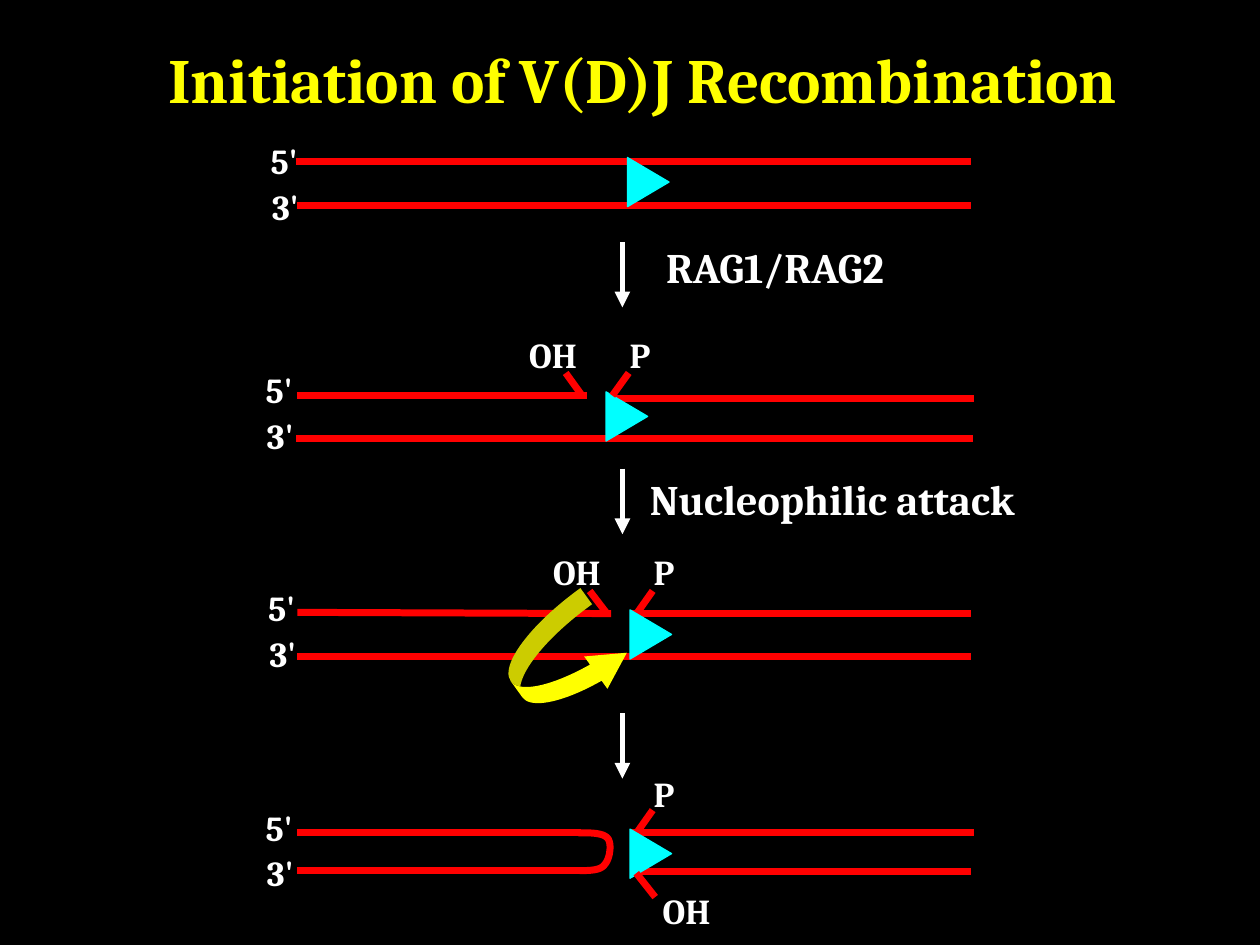
from lxml.etree import SubElement
from pptx import Presentation
from pptx.dml.color import RGBColor
from pptx.enum.shapes import MSO_CONNECTOR, MSO_SHAPE
from pptx.enum.text import MSO_ANCHOR, PP_ALIGN
from pptx.oxml.ns import qn
from pptx.util import Inches, Pt

BLACK, WHITE, RED = "000000", "FFFFFF", "FF0000"
YELLOW, CYAN = "FFFF00", "00FFFF"


def color(hex_value):
    return RGBColor.from_string(hex_value)


def bezier(p0, p1, p2, p3, steps=12):
    """Return points along a cubic curve, without its start point."""
    points = []
    for step in range(1, steps + 1):
        t = step / steps
        weights = ((1 - t) ** 3, 3 * t * (1 - t) ** 2, 3 * t * t * (1 - t), t ** 3)
        points.append(tuple(sum(w * p[axis] for w, p in zip(weights, (p0, p1, p2, p3)))
                            for axis in (0, 1)))
    return points


class Diagram:
    """Holds the slide and the style shared by its elements."""

    font_format = {"name": "Cambria", "bold": True}
    strand_width = 4
    arrow_width = 3

    def __init__(self, slide):
        self.slide = slide
        self.shapes = slide.shapes

    def text(self, words, left, top, width, height=0.53, size=20, fill=WHITE):
        box = self.shapes.add_textbox(Inches(left), Inches(top), Inches(width), Inches(height))
        frame = box.text_frame
        for name, value in {"word_wrap": True, "vertical_anchor": MSO_ANCHOR.MIDDLE}.items():
            setattr(frame, name, value)
        paragraph = frame.paragraphs[0]
        paragraph.alignment = PP_ALIGN.CENTER
        run = paragraph.add_run()
        run.text = words
        for name, value in {**self.font_format, "size": Pt(size)}.items():
            setattr(run.font, name, value)
        run.font.color.rgb = color(fill)

    def shape(self, kind, left, top, width, height, fill, rotation=0, outline=None):
        shape = self.shapes.add_shape(kind, Inches(left), Inches(top),
                                      Inches(width), Inches(height))
        shape.shadow.inherit = False
        shape.rotation = rotation
        shape.fill.solid()
        shape.fill.fore_color.rgb = color(fill)
        if outline:
            shape.line.color.rgb = color(outline)
            shape.line.width = Pt(0.75)
        else:
            shape.line.fill.background()
        return shape

    def line(self, start, end, stroke=RED, width=strand_width):
        ends = [Inches(value) for value in (*start, *end)]
        line = self.shapes.add_connector(MSO_CONNECTOR.STRAIGHT, *ends)
        line.line.color.rgb = color(stroke)
        line.line.width = Pt(width)
        SubElement(line._element.spPr, qn("a:effectLst"))
        return line

    def step_arrow(self, top, x=4.94, length=0.52):
        arrow = self.line((x, top), (x, top + length), WHITE, self.arrow_width)
        SubElement(arrow.line._get_or_add_ln(), qn("a:tailEnd"), type="triangle")

    def curve(self, start, *segments):
        points = [start]
        for segment in segments:
            points += bezier(points[-1], *segment)
        builder = self.shapes.build_freeform(*(Inches(v) for v in start), scale=1.0)
        builder.add_line_segments([(Inches(x), Inches(y)) for x, y in points[1:]], close=False)
        curve = builder.convert_to_shape()
        curve.shadow.inherit = False
        curve.fill.background()
        curve.line.color.rgb = color(RED)
        curve.line.width = Pt(self.strand_width)

    def stage(self, label_left, label_top, strands, signal_left, signal_top, stubs, groups):
        """Draw one DNA state: strands, signal triangle, end labels and chemical groups."""
        for start, end in strands:
            self.line(start, end)
        self.shape(MSO_SHAPE.ISOSCELES_TRIANGLE, signal_left, signal_top, 0.39, 0.33,
                   CYAN, rotation=90, outline=CYAN)
        for row, end_name in enumerate(("5'", "3'")):
            self.text(end_name, label_left + 0.01 * row, label_top + 0.36 * row, 0.53)
        for start, end in stubs:
            self.line(start, end)
        for name, left, top in groups:
            self.text(name, left, top, 0.66)


STAGES = [
    dict(label_left=1.99, label_top=1.01, signal_left=4.95, signal_top=1.28,
         strands=[((2.35, 1.28), (7.71, 1.28)), ((2.36, 1.63), (7.71, 1.63))],
         stubs=[], groups=[]),
    dict(label_left=1.95, label_top=2.83, signal_left=4.78, signal_top=3.14,
         strands=[((2.36, 3.14), (4.66, 3.14)), ((2.35, 3.48), (7.72, 3.48)),
                  ((4.81, 3.16), (7.73, 3.16))],
         stubs=[((4.49, 2.96), (4.62, 3.14)), ((4.99, 2.96), (4.86, 3.14))],
         groups=[("OH", 4.06, 2.55), ("P", 4.75, 2.55)]),
    dict(label_left=1.97, label_top=4.56, signal_left=4.97, signal_top=4.87,
         strands=[((2.36, 4.86), (4.85, 4.87)), ((2.36, 5.21), (7.71, 5.21)),
                  ((5.02, 4.87), (7.71, 4.87))],
         stubs=[((4.68, 4.69), (4.81, 4.86)), ((5.18, 4.69), (5.06, 4.86))],
         groups=[("OH", 4.25, 4.27), ("P", 4.94, 4.27)]),
    dict(label_left=1.95, label_top=6.3, signal_left=4.97, signal_top=6.61,
         strands=[((2.36, 6.61), (4.61, 6.61)), ((2.36, 6.91), (4.61, 6.91)),
                  ((5.02, 6.61), (7.73, 6.61)), ((5, 6.92), (7.71, 6.92))],
         stubs=[((5.18, 6.43), (5.06, 6.6)), ((5.2, 7.12), (5.05, 6.93))],
         groups=[("P", 4.94, 6.03), ("OH", 5.12, 6.96)]),
]


def main():
    presentation = Presentation()
    presentation.slide_width, presentation.slide_height = Inches(10), Inches(7.5)
    diagram = Diagram(presentation.slides.add_slide(presentation.slide_layouts[6]))

    diagram.shape(MSO_SHAPE.RECTANGLE, -0.01, -0.02, 10.01, 7.52, BLACK)
    diagram.text("Initiation of V(D)J Recombination", 1.2, 0, 7.8, 1.25, size=36, fill=YELLOW)

    for stage in STAGES:
        diagram.stage(**stage)
    for top in (1.92, 3.72, 5.66):
        diagram.step_arrow(top)
    diagram.text("RAG1/RAG2", 4.79, 1.85, 2.72, size=24)
    diagram.text("Nucleophilic attack", 4.96, 3.69, 3.29, size=24)

    attack = diagram.shape(MSO_SHAPE.CURVED_RIGHT_ARROW, 4.04, 4.85, 0.88, 0.79,
                           YELLOW, rotation=324.3)
    for index, value in enumerate((0.2, 0.4, 0.37)):
        attack.adjustments[index] = value

    diagram.curve((4.59, 6.61),
                  ((4.69, 6.61), (4.78, 6.61), (4.82, 6.65)),
                  ((4.86, 6.69), (4.84, 6.82), (4.8, 6.86)),
                  ((4.77, 6.91), (4.68, 6.91), (4.6, 6.91)))
    presentation.save("out.pptx")


if __name__ == "__main__":
    main()
